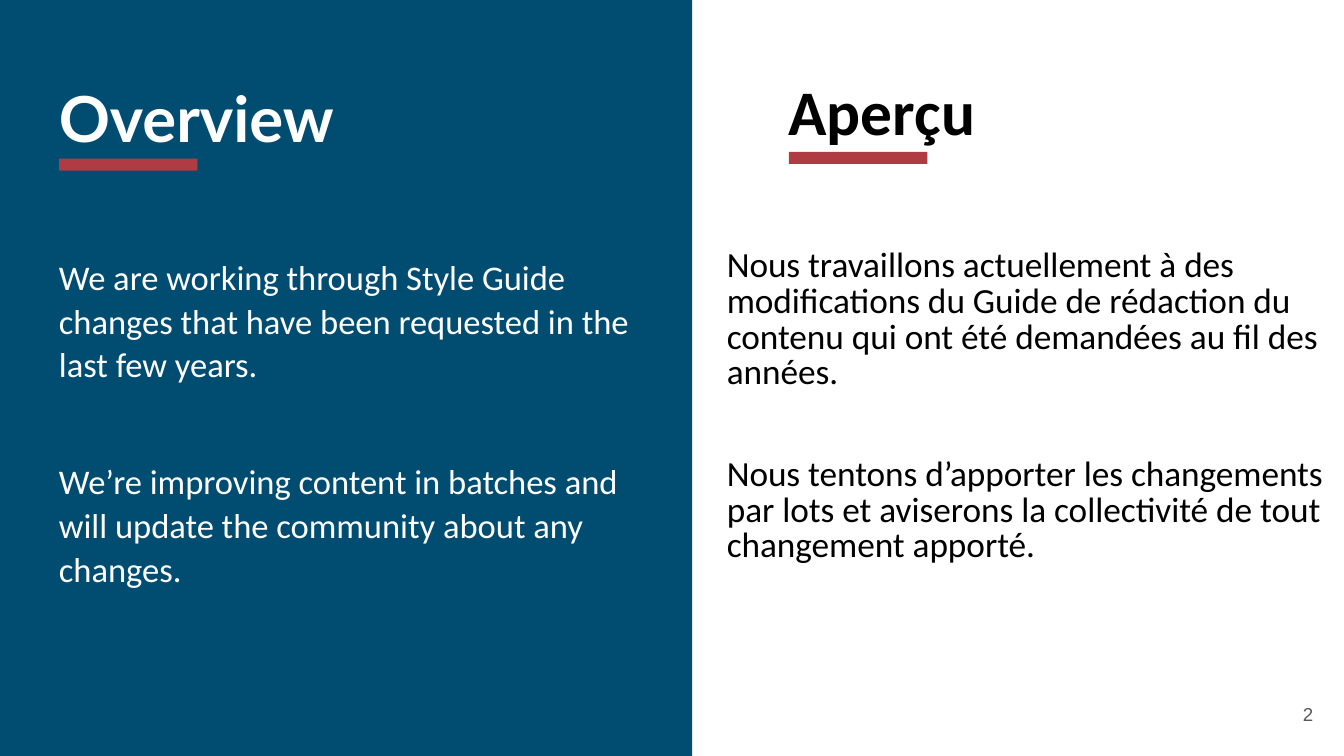
from pptx import Presentation
from pptx import util as u
from pptx.dml.color import RGBColor
from pptx.enum import shapes, text

NAVY = RGBColor(0x00, 0x4D, 0x71)
RED = RGBColor(0xAF, 0x3C, 0x43)
WHITE = RGBColor(0xFF, 0xFF, 0xFF)
BLACK = RGBColor(0x00, 0x00, 0x00)
GREY = RGBColor(0x59, 0x59, 0x59)

INSET = 0.1

ENGLISH = [
    "We are working through Style Guide changes that have been requested in the last few years.",
    "We’re improving content in batches and will update the community about any changes.",
]
FRENCH = [
    "Nous travaillons actuellement à des modifications du Guide de rédaction du contenu "
    "qui ont été demandées au fil des années.",
    "Nous tentons d’apporter les changements par lots et aviserons la collectivité de tout "
    "changement apporté.",
]


def add_block(slide, left, top, width, height, color):
    """Add a plain filled rectangle."""
    shape = slide.shapes.add_shape(
        shapes.MSO_SHAPE.RECTANGLE,
        u.Inches(left), u.Inches(top), u.Inches(width), u.Inches(height))
    shape.shadow.inherit = False
    shape.fill.solid()
    shape.fill.fore_color.rgb = color
    shape.line.fill.background()


def add_text(slide, left, top, width, height, lines, font, size, color,
             bold=False, spacing=None, gap=0):
    """Add a text box, with gap points before each paragraph after the first."""
    box = slide.shapes.add_textbox(
        u.Inches(left), u.Inches(top), u.Inches(width), u.Inches(height))
    frame = box.text_frame
    frame.word_wrap = True
    frame.margin_left = frame.margin_right = u.Inches(INSET)
    frame.margin_top = frame.margin_bottom = u.Inches(INSET)
    frame.text = "\n".join(lines)
    for index, paragraph in enumerate(frame.paragraphs):
        paragraph.font.name = font
        paragraph.font.size = u.Pt(size)
        paragraph.font.bold = bold
        paragraph.font.color.rgb = color
        if spacing:
            paragraph.line_spacing = spacing
        if index:
            paragraph.space_before = u.Pt(gap)
    return frame


def add_heading(slide, left, top, title, font, color):
    """Add a title with the red bar that underlines it."""
    add_text(slide, left, top, 3.36, 1.57, [title], font, 34, color, bold=True)
    add_block(slide, left + INSET, top + 0.69, 1.03, 0.09, RED)


def add_page_number(slide, number):
    frame = add_text(slide, 9.27, 5.1, 0.6, 0.43, [number], "Arial", 10, GREY)
    frame.vertical_anchor = text.MSO_ANCHOR.MIDDLE
    frame.paragraphs[0].alignment = text.PP_ALIGN.RIGHT


def main():
    # Widescreen page, 16:9
    presentation = Presentation()
    presentation.slide_width = u.Inches(10)
    presentation.slide_height = u.Inches(10) * 9 // 16
    slide = presentation.slides.add_slide(presentation.slide_layouts[6])

    # English half
    add_block(slide, -0.05, -0.01, 5.2, 5.64, NAVY)
    add_heading(slide, 0.34, 0.49, "Overview", "Lato", WHITE)
    add_text(slide, 0.34, 1.79, 4.66, 3.58, ENGLISH, "Calibri", 18.5, WHITE,
             spacing=1.05, gap=39.5)

    # French half
    add_heading(slide, 5.77, 0.44, "Aperçu", "Calibri", BLACK)
    add_text(slide, 5.31, 1.75, 4.66, 3.58, FRENCH, "Calibri", 18.87, BLACK,
             spacing=0.85, gap=35)

    add_page_number(slide, "2")
    presentation.save("out.pptx")


if __name__ == "__main__":
    main()
